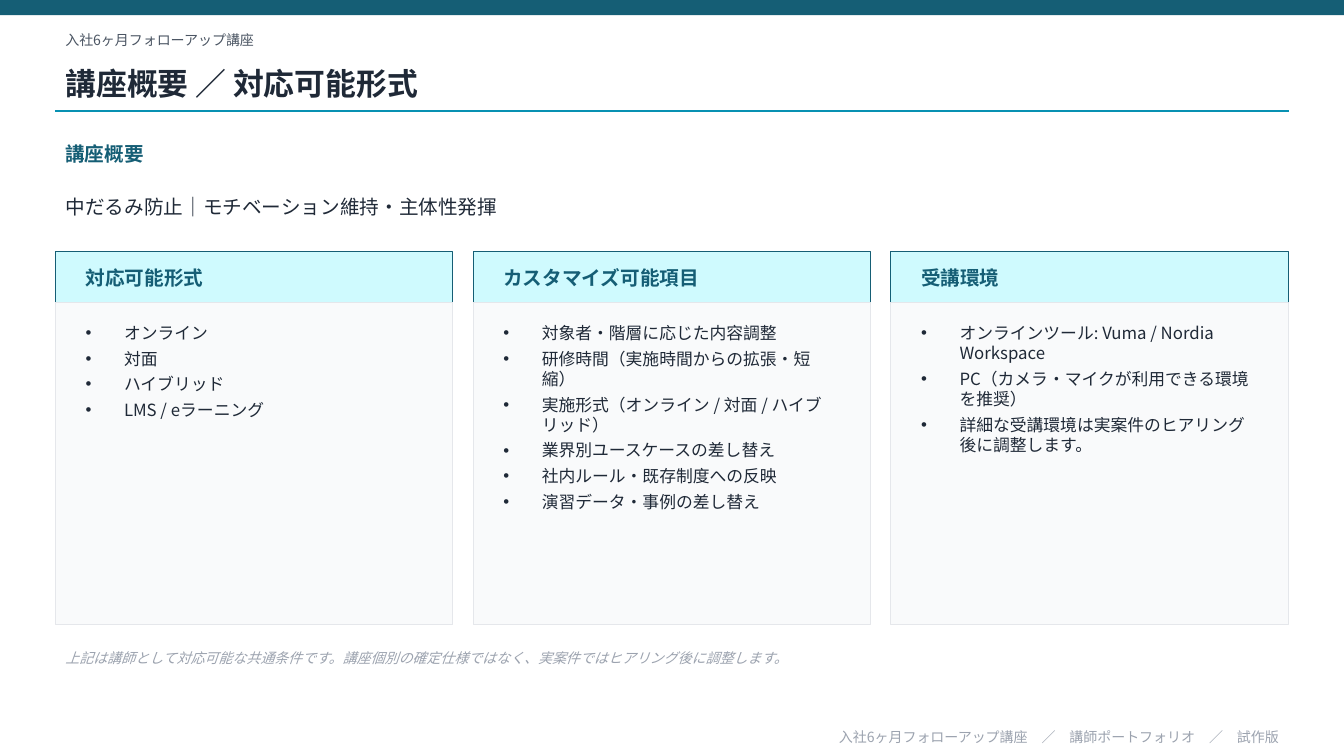
from dataclasses import dataclass

from lxml import etree
from pptx import Presentation
from pptx.dml.color import RGBColor
from pptx.enum.shapes import MSO_CONNECTOR, MSO_SHAPE
from pptx.enum.text import MSO_ANCHOR, MSO_AUTO_SIZE, PP_ALIGN
from pptx.oxml.ns import qn
from pptx.util import Inches, Pt

RECT, STRAIGHT = MSO_SHAPE.RECTANGLE, MSO_CONNECTOR.STRAIGHT
TOP, MIDDLE = MSO_ANCHOR.TOP, MSO_ANCHOR.MIDDLE
LEFT, RIGHT = PP_ALIGN.LEFT, PP_ALIGN.RIGHT
NO_FIT = MSO_AUTO_SIZE.NONE

FONT = "Noto Sans CJK JP"
COLORS = {
    "brand": "155E75", "accent": "0891B2", "tint": "CFFAFE", "panel": "F9FAFB",
    "border": "E5E7EB", "ink": "1F2937", "gray": "4B5563", "muted": "9CA3AF",
}

SLIDE_W, SLIDE_H = 13.33, 7.5
MARGIN = 0.55
CONTENT_W = SLIDE_W - 2 * MARGIN
GUTTER, PAD = 0.2, 0.2
HEAD_Y, HEAD_H, BODY_H = 2.5, 0.5, 3.2
BODY_Y = HEAD_Y + HEAD_H
INDENT = 0.38


@dataclass
class Box:
    x: float
    y: float
    w: float
    h: float

    def emu(self) -> list:
        return [Inches(v) for v in (self.x, self.y, self.w, self.h)]


@dataclass
class Style:
    size: float
    color: str
    bold: bool = False
    italic: bool = False
    align: int = LEFT
    anchor: int = MIDDLE
    bullet: bool = False
    after: float = 0


@dataclass
class Card:
    heading: str
    items: list[str]


KICKER = Style(10, "gray")
TITLE = Style(22, "ink", bold=True)
HEADING = Style(14, "brand", bold=True)
LEAD = Style(14, "ink")
ITEMS = Style(12, "ink", anchor=TOP, bullet=True, after=4)
NOTE = Style(10, "muted", italic=True)
FOOTER = Style(10, "muted", align=RIGHT)

CARDS = [
    Card("対応可能形式", ["オンライン", "対面", "ハイブリッド", "LMS / eラーニング"]),
    Card("カスタマイズ可能項目", [
        "対象者・階層に応じた内容調整",
        "研修時間（実施時間からの拡張・短縮）",
        "実施形式（オンライン / 対面 / ハイブリッド）",
        "業界別ユースケースの差し替え",
        "社内ルール・既存制度への反映",
        "演習データ・事例の差し替え",
    ]),
    Card("受講環境", [
        "オンラインツール: Vuma / Nordia Workspace",
        "PC（カメラ・マイクが利用できる環境を推奨）",
        "詳細な受講環境は実案件のヒアリング後に調整します。",
    ]),
]


def rgb(name: str) -> RGBColor:
    return RGBColor.from_string(COLORS[name])


def set_bullet(p, on: bool) -> None:
    pPr = p._p.get_or_add_pPr()
    indent = Inches(INDENT) if on else 0
    pPr.set("marL", str(indent))
    pPr.set("indent", str(-indent))
    if on:
        etree.SubElement(pPr, qn("a:buChar")).set("char", "•")
    else:
        etree.SubElement(pPr, qn("a:buNone"))


def fill_text(sp, lines: list[str], style: Style) -> None:
    tf = sp.text_frame
    frame = {"word_wrap": True, "auto_size": NO_FIT, "vertical_anchor": style.anchor}
    for key, value in frame.items():
        setattr(tf, key, value)
    para = {"alignment": style.align, "space_before": Pt(0), "space_after": Pt(style.after)}
    font = {"size": Pt(style.size), "bold": style.bold, "italic": style.italic, "name": FONT}
    for i, line in enumerate(lines):
        p = tf.paragraphs[0] if i == 0 else tf.add_paragraph()
        set_bullet(p, style.bullet)
        for key, value in para.items():
            setattr(p, key, value)
        r = p.add_run()
        r.text = line
        for key, value in font.items():
            setattr(r.font, key, value)
        r.font.color.rgb = rgb(style.color)
        etree.SubElement(r._r.get_or_add_rPr(), qn("a:ea")).set("typeface", FONT)


def add_text(s, box: Box, text: str, style: Style) -> None:
    fill_text(s.shapes.add_textbox(*box.emu()), [text], style)


def place(s, sp, box: Box, lines: list[str], style: Style) -> None:
    """Position a placeholder, fill it and bring it to the front."""
    sp.left, sp.top, sp.width, sp.height = box.emu()
    fill_text(sp, lines, style)
    s.shapes.element.append(sp.element)


def add_rect(s, box: Box, fill: str, line: str | None = None) -> None:
    sp = s.shapes.add_shape(RECT, *box.emu())
    sp.shadow.inherit = False
    sp.fill.solid()
    sp.fill.fore_color.rgb = rgb(fill)
    if line:
        sp.line.color.rgb = rgb(line)
        sp.line.width = Pt(0.75)
    else:
        sp.line.fill.background()


def add_rule(s, y: float) -> None:
    ends = (MARGIN, y, MARGIN + CONTENT_W, y)
    line = s.shapes.add_connector(STRAIGHT, *[Inches(v) for v in ends])
    line.line.color.rgb = rgb("accent")
    line.line.width = Pt(1)
    etree.SubElement(line._element.spPr, qn("a:effectLst"))


def add_card(s, col: int, card: Card, body) -> None:
    w = (CONTENT_W - GUTTER * (len(CARDS) - 1)) / len(CARDS)
    x = MARGIN + col * (w + GUTTER)
    inner_x, inner_w = x + PAD, w - 2 * PAD
    add_rect(s, Box(x, HEAD_Y, w, HEAD_H), "tint", "brand")
    add_text(s, Box(inner_x, HEAD_Y, inner_w, HEAD_H), card.heading, HEADING)
    add_rect(s, Box(x, BODY_Y, w, BODY_H), "panel", "border")
    place(s, body, Box(inner_x, BODY_Y + 0.15, inner_w, BODY_H - 0.35), card.items, ITEMS)


def band(y: float, h: float) -> Box:
    """Full content-width row."""
    return Box(MARGIN, y, CONTENT_W, h)


def main() -> None:
    prs = Presentation()
    prs.slide_width, prs.slide_height = Inches(SLIDE_W), Inches(SLIDE_H)
    s = prs.slides.add_slide(prs.slide_layouts.get_by_name("Comparison"))
    title, lead, *bodies = s.placeholders

    add_rect(s, Box(0, 0, SLIDE_W, 0.15), "brand")
    add_text(s, band(0.25, 0.3), "入社6ヶ月フォローアップ講座", KICKER)
    place(s, title, band(0.55, 0.55), ["講座概要 ／ 対応可能形式"], TITLE)
    add_rule(s, 1.1)
    add_text(s, band(1.35, 0.35), "講座概要", HEADING)
    place(s, lead, band(1.75, 0.6), ["中だるみ防止｜モチベーション維持・主体性発揮"], LEAD)
    for col, (card, body) in enumerate(zip(CARDS, bodies)):
        add_card(s, col, card, body)
    add_text(s, band(6.35, 0.35),
             "上記は講師として対応可能な共通条件です。講座個別の確定仕様ではなく、"
             "実案件ではヒアリング後に調整します。", NOTE)
    add_text(s, band(7.2, 0.22),
             "入社6ヶ月フォローアップ講座　／　講師ポートフォリオ　／　試作版", FOOTER)
    prs.save("out.pptx")


if __name__ == "__main__":
    main()
